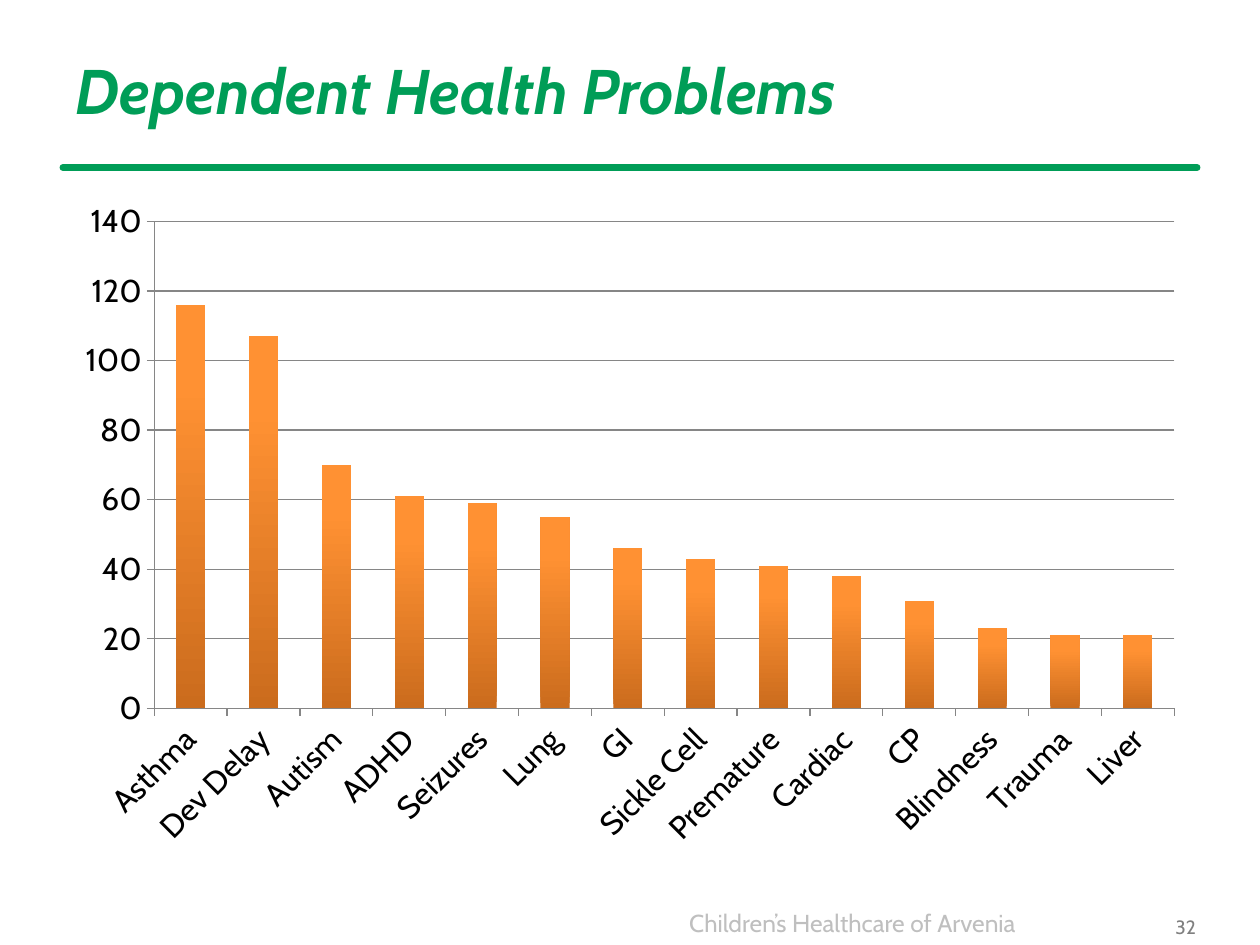
from lxml import etree
from pptx import Presentation
from pptx import util as u
from pptx.chart.data import CategoryChartData
from pptx.dml.color import RGBColor
from pptx.enum import chart as ch, shapes, text
from pptx.oxml.ns import qn

GREEN = RGBColor(0x00, 0x9D, 0x57)
ORANGE = RGBColor(0xFF, 0x91, 0x33)
RUST = RGBColor(0xCB, 0x6C, 0x1D)
BLACK = RGBColor(0, 0, 0)
GRID = RGBColor(0x86, 0x86, 0x86)
SILVER = RGBColor(0xBF, 0xBF, 0xBF)
GRAY = RGBColor(0x80, 0x80, 0x80)
FONT = "Cabin"

prs = Presentation()
prs.slide_width, prs.slide_height = u.Inches(10), u.Inches(7.5)
W, H = prs.slide_width, prs.slide_height
MARGIN = int(W * 0.05)
WIDTH = W - 2 * MARGIN
s = prs.slides.add_slide(prs.slide_layouts[5])


def style(font, size, color):
    font.name, font.size = FONT, u.Pt(size)
    font.color.rgb = color


title = s.shapes.title
title.left, title.top, title.width, title.height = MARGIN, u.Inches(0.17), WIDTH, u.Inches(1.08)
tf = title.text_frame
tf.vertical_anchor = text.MSO_ANCHOR.MIDDLE
p = tf.paragraphs[0]
p.alignment = text.PP_ALIGN.LEFT
r = p.add_run()
r.text = "Dependent Health Problems"
style(r.font, 36, GREEN)
r.font.bold = r.font.italic = True

rule_y = u.Inches(1.33)
rule = s.shapes.add_connector(shapes.MSO_CONNECTOR.STRAIGHT, MARGIN, rule_y, W - MARGIN, rule_y)
rule.line.color.rgb = GREEN
rule.line.width = u.Pt(4)
rule.line._get_or_add_ln().set("cap", "rnd")
etree.SubElement(rule._element.spPr, qn("a:effectLst"))

problems = {
    "Asthma": 116, "Dev Delay": 107, "Autism": 70, "ADHD": 61, "Seizures": 59,
    "Lung": 55, "GI": 46, "Sickle Cell": 43, "Premature": 41, "Cardiac": 38,
    "CP": 31, "Blindness": 23, "Trauma": 21, "Liver": 21,
}
data = CategoryChartData()
data.categories = list(problems)
data.add_series("Series 1", list(problems.values()))
chart = s.shapes.add_chart(ch.XL_CHART_TYPE.COLUMN_CLUSTERED, MARGIN, int(H * 0.2),
                           WIDTH, u.Inches(5.33), data).chart
chart.has_legend = chart.has_title = False
style(chart.font, 18, BLACK)

plot = chart.plots[0]
plot.gap_width = 150
plot.vary_by_categories = False
fill = plot.series[0].format.fill
fill.gradient()
fill.gradient_angle = 90
for stop, color, position in zip(fill.gradient_stops, (RUST, ORANGE), (0, 0.8)):
    stop.color.rgb = color
    stop.position = position

cat, val = chart.category_axis, chart.value_axis
for axis in (cat, val):
    axis.major_tick_mark = ch.XL_TICK_MARK.OUTSIDE
    axis.minor_tick_mark = ch.XL_TICK_MARK.NONE
    axis.format.line.color.rgb = GRID
    axis.format.line.width = u.Pt(0.75)
    style(axis.tick_labels.font, 18, BLACK)
cat._element.find(qn("c:txPr")).find(qn("a:bodyPr")).set("rot", str(-45 * 60000))
val.minimum_scale, val.maximum_scale, val.major_unit = 0, 140, 20
val.has_major_gridlines = True
val.major_gridlines.format.line.color.rgb = GRID
val.major_gridlines.format.line.width = u.Pt(0.75)

footers = [
    ("Children’s Healthcare of Arvenia", 1.08, 7.08, 0.34, 14, SILVER, text.MSO_ANCHOR.TOP),
    ("32", 9.17, 0.42, 0.4, 11, GRAY, text.MSO_ANCHOR.MIDDLE),
]
for words, left, width, height, size, color, anchor in footers:
    sp = s.shapes.add_textbox(u.Inches(left), u.Inches(7.16), u.Inches(width), u.Inches(height))
    tf = sp.text_frame
    tf.word_wrap = True
    tf.vertical_anchor = anchor
    p = tf.paragraphs[0]
    p.alignment = text.PP_ALIGN.RIGHT
    r = p.add_run()
    r.text = words
    style(r.font, size, color)

prs.save("out.pptx")
